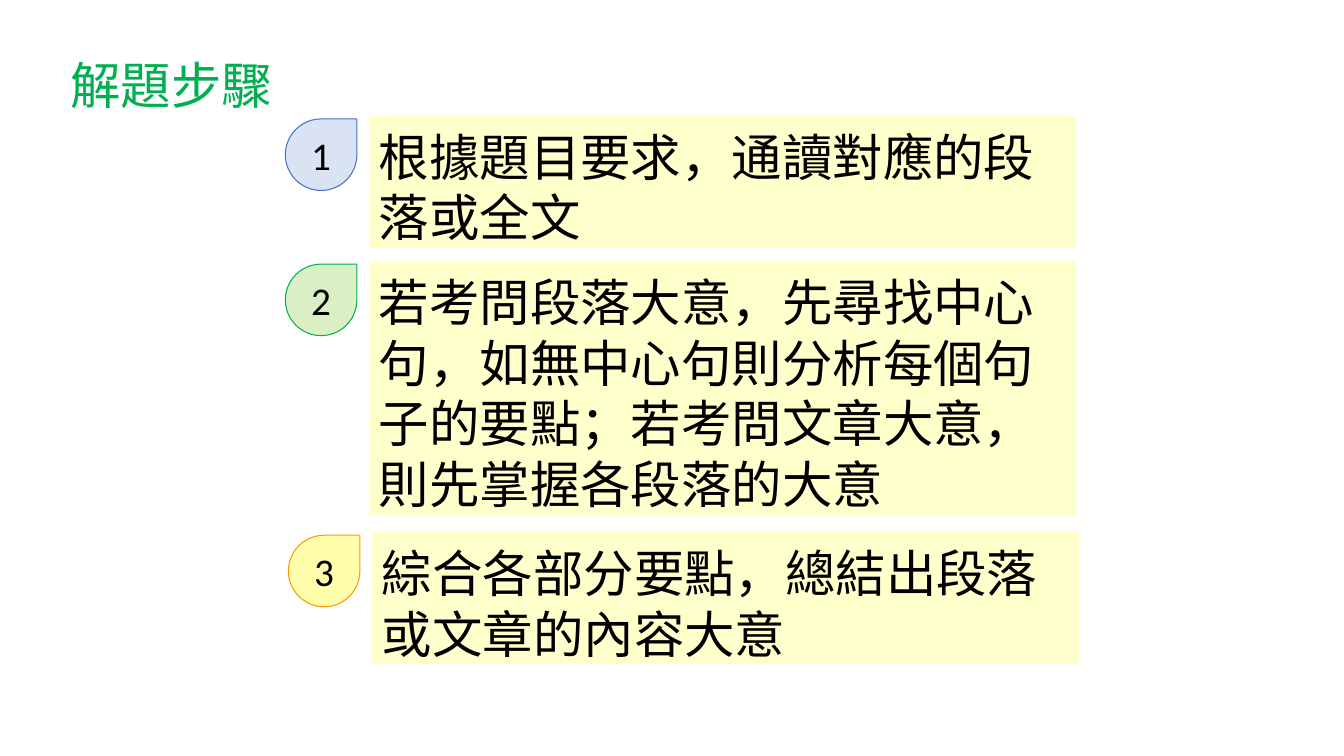
"""Build the slide listing three problem-solving steps."""
from lxml.etree import SubElement
from pptx import Presentation
from pptx.dml.color import RGBColor
from pptx.enum.shapes import MSO_SHAPE as Shape
from pptx.enum.text import MSO_ANCHOR as Anchor, MSO_AUTO_SIZE as AutoSize, PP_ALIGN as Align
from pptx.oxml.ns import qn
from pptx.util import Pt

EMU_PER_PX = 9144
CJK_FONT = "Noto Sans CJK SC"
STEPS = [
    ("根據題目要求，通讀對應的段落或全文", 366, 115, 131, "8FAADC", "4472C4"),
    ("若考問段落大意，先尋找中心句，如無中心句則分析每個句子的要點；若考問文章大意，則先掌握各段落的大意",
     366, 259, 252, "92D050", "00B050"),
    ("綜合各部分要點，總結出段落或文章的內容大意", 369, 528, 131, "FFFF00", "FF9900"),
]


def px(*lengths):
    """Turn pixel lengths into EMU."""
    return [length * EMU_PER_PX for length in lengths]


def color(hex_string):
    """Return the colour for a hex string."""
    return RGBColor.from_string(hex_string)


def write(shape, text, size=36, font="Calibri", ink="000000", align=Align.LEFT,
          anchor=Anchor.TOP, wrap=True, top=5, spacing=None):
    """Put formatted text into a shape."""
    frame = shape.text_frame
    frame.auto_size = AutoSize.NONE
    frame.word_wrap = wrap
    frame.vertical_anchor = anchor
    frame.margin_left, frame.margin_top, frame.margin_right, frame.margin_bottom = px(10, top, 10, 5)
    paragraph = frame.paragraphs[0]
    paragraph.alignment = align
    paragraph.line_spacing = spacing
    run = paragraph.add_run()
    run.text = text
    run.font.size = Pt(size)
    run.font.name = font
    run.font.color.rgb = color(ink)
    SubElement(run.font._element, qn("a:ea"), typeface=CJK_FONT)


def add_shape(slide, kind, box, fill, line=None, opacity=None):
    """Add a filled preset shape with an optional outline and opacity."""
    shape = slide.shapes.add_shape(kind, *px(*box))
    shape.shadow.inherit = False
    shape.fill.solid()
    shape.fill.fore_color.rgb = color(fill)
    if opacity:
        fill_color = shape._element.spPr.find(qn("a:solidFill"))[0]
        SubElement(fill_color, qn("a:alpha"), val=str(opacity * 1000))
    if line:
        shape.line.color.rgb = color(line)
        shape.line.width = Pt(0.75)
    else:
        shape.line.fill.background()
    return shape


def add_title(slide, text):
    """Place and format the slide title."""
    title = slide.shapes.title
    title.left, title.top, title.width, title.height = px(60, 44, 222, 71)
    write(title, text, font=CJK_FONT, ink="00B050", wrap=False, top=10, spacing=Pt(43.2))


def add_step(slide, number, text, left, top, height, fill, line):
    """Add one step panel with its numbered teardrop."""
    panel = add_shape(slide, Shape.RECTANGLE, (left, top, 701, height), "FFFFCC")
    write(panel, text, top=10, spacing=Pt(43.2))
    badge = add_shape(slide, Shape.TEAR, (left - 83, top + 3, 71, 71), fill, line, opacity=33)
    write(badge, str(number), size=28, align=Align.CENTER, anchor=Anchor.MIDDLE)


def main():
    """Build and save the presentation."""
    presentation = Presentation()
    presentation.slide_width, presentation.slide_height = px(1333, 750)
    slide = presentation.slides.add_slide(presentation.slide_layouts[5])
    add_title(slide, "解題步驟")
    for number, step in enumerate(STEPS, start=1):
        add_step(slide, number, *step)
    presentation.save("out.pptx")


if __name__ == "__main__":
    main()
